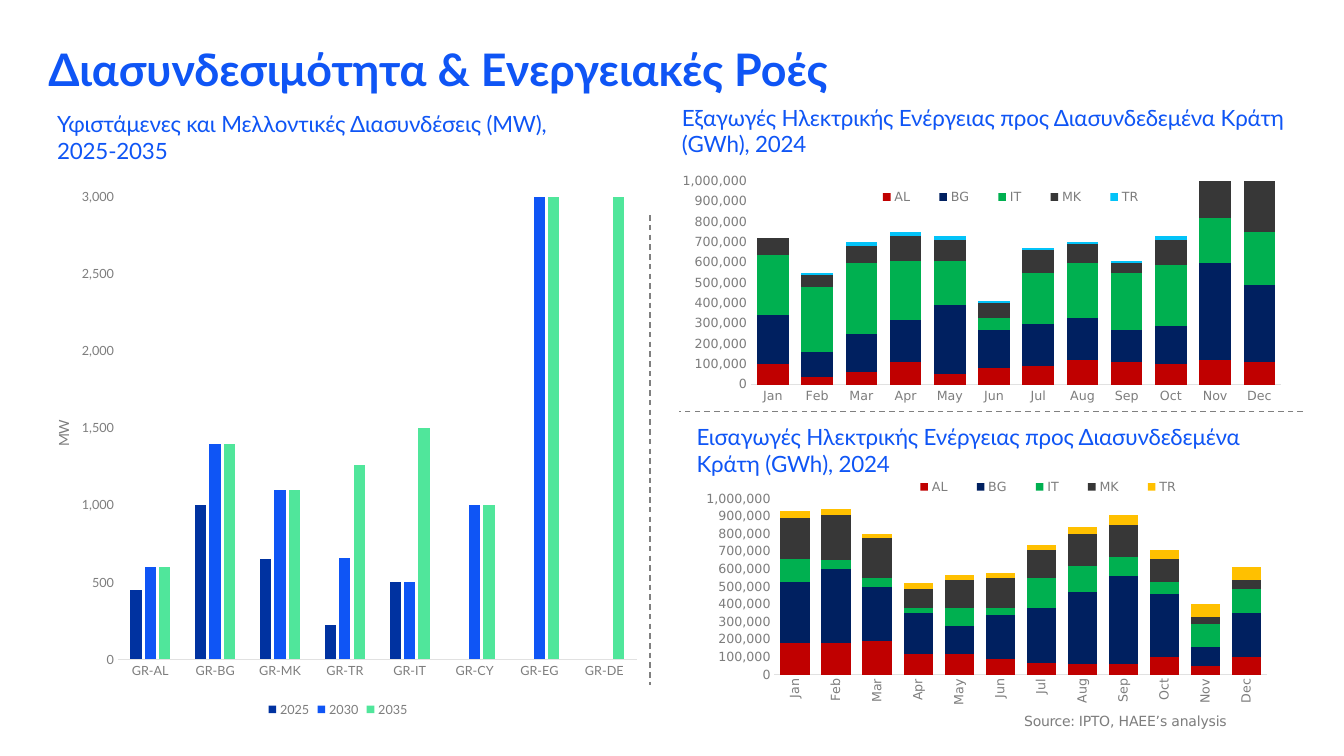
from lxml import etree
from pptx import Presentation
from pptx.chart.data import CategoryChartData
from pptx.dml.color import RGBColor
from pptx.enum.chart import XL_CHART_TYPE, XL_LEGEND_POSITION, XL_TICK_MARK
from pptx.enum.dml import MSO_LINE
from pptx.enum.shapes import MSO_CONNECTOR
from pptx.oxml.ns import qn
from pptx.util import Pt

PX = 9525
STACK = XL_CHART_TYPE.COLUMN_STACKED
CLUSTER = XL_CHART_TYPE.COLUMN_CLUSTERED
TOP, BOTTOM = XL_LEGEND_POSITION.TOP, XL_LEGEND_POSITION.BOTTOM
NO_TICK = XL_TICK_MARK.NONE
STRAIGHT = MSO_CONNECTOR.STRAIGHT
DASH = MSO_LINE.DASH

BLUE = RGBColor(0x0F, 0x55, 0xF5)
DEEP = RGBColor(0x00, 0x32, 0xA0)
MINT = RGBColor(0x50, 0xE6, 0x9B)
RED = RGBColor(0xC0, 0x00, 0x00)
NAVY = RGBColor(0x00, 0x20, 0x60)
GREEN = RGBColor(0x00, 0xB0, 0x50)
DARK = RGBColor(0x37, 0x37, 0x37)
CYAN = RGBColor(0x03, 0xC3, 0xF8)
AMBER = RGBColor(0xFF, 0xC0, 0x00)
GREY = RGBColor(0x7D, 0x7D, 0x7D)
PALE = RGBColor(0xE1, 0xE1, 0xE1)
RULE = RGBColor(0x80, 0x80, 0x80)

LATO, SANS = "Lato", "DejaVu Sans"
MONTHS = "Jan Feb Mar Apr May Jun Jul Aug Sep Oct Nov Dec".split()
LINKS = ["GR-" + code for code in "AL BG MK TR IT CY EG DE".split()]
LANDS = "AL BG IT MK TR".split()
EXPORTS = [
    [10, 4, 6, 11, 5, 8, 9, 12, 11, 10, 12, 11],
    [24, 12, 19, 21, 34, 19, 21, 21, 16, 19, 48, 38],
    [30, 32, 35, 29, 22, 6, 25, 27, 28, 30, 22, 26],
    [8, 6, 8, 12, 10, 7, 11, 9, 5, 12, 20, 25],
    [0, 1, 2, 2, 2, 1, 1, 1, 1, 2, 0, 0],
]
IMPORTS = [
    [18, 18, 19, 12, 12, 9, 7, 6, 6, 10, 5, 10],
    [35, 42, 31, 23, 16, 25, 31, 41, 50, 36, 11, 25],
    [13, 5, 5, 3, 10, 4, 17, 15, 11, 7, 13, 14],
    [23, 26, 23, 11, 16, 17, 16, 18, 18, 13, 4, 5],
    [4, 3, 2, 3, 3, 3, 3, 4, 6, 5, 7, 7],
]
GRID = [
    ("2025", [450, 1000, 650, 220, 500, None, None, None], DEEP),
    ("2030", [600, 1400, 1100, 660, 500, 1000, 3000, None], BLUE),
    ("2035", [600, 1400, 1100, 1260, 1500, 1000, 3000, 3000], MINT),
]


def style(font, face, size, color):
    """Set face, size and colour of a font."""
    font.name, font.size = face, Pt(size)
    font.color.rgb = color


def place(node, spot, index, inner=False):
    """Give a chart part a manual layout in fractions of the chart."""
    for old in node.findall(qn("c:layout")):
        node.remove(old)
    layout = etree.Element(qn("c:layout"))
    manual = etree.SubElement(layout, qn("c:manualLayout"))
    pairs = [("layoutTarget", "inner")] if inner else []
    pairs += [("xMode", "edge"), ("yMode", "edge"), *zip("xywh", spot)]
    for tag, value in pairs:
        etree.SubElement(manual, qn("c:" + tag)).set("val", str(value))
    node.insert(index, layout)


def turn(node):
    """Turn the text of a chart part upright."""
    body = node.find(".//" + qn("a:bodyPr"))
    body.set("rot", "-5400000")
    body.set("vert", "horz")


def add_bars(slide, box, kind, cats, series, face, top, step, gap, lap, spot):
    """Draw a column chart in the box and return it."""
    data = CategoryChartData(number_format="General")
    data.categories = cats
    for name, vals, _ in series:
        data.add_series(name, vals)
    chart = slide.shapes.add_chart(kind, *(n * PX for n in box), data).chart
    chart.has_title = False
    style(chart.font, face, 10, DARK)
    plot = chart.plots[0]
    plot.gap_width, plot.overlap = gap, lap
    plot.vary_by_categories = False
    for bar, (_, _, color) in zip(plot.series, series):
        bar.format.fill.solid()
        bar.format.fill.fore_color.rgb = color
        bar.invert_if_negative = False
    cat, val = chart.category_axis, chart.value_axis
    for axis in (cat, val):
        axis.major_tick_mark = axis.minor_tick_mark = NO_TICK
        axis.has_major_gridlines = False
        style(axis.tick_labels.font, face, 9, GREY)
    cat.format.line.color.rgb = PALE
    cat.format.line.width = Pt(0.75)
    val.format.line.fill.background()
    val.minimum_scale, val.maximum_scale, val.major_unit = 0, top, step
    val.tick_labels.number_format = "#,##0"
    val.tick_labels.number_format_is_linked = False
    chart.has_legend = True
    style(chart.legend.font, face, 9, GREY)
    place(chart._chartSpace.find(".//" + qn("c:plotArea")), spot, 0, True)
    return chart


def add_flow(slide, box, table, last, spot, key, upright=False):
    """Draw a monthly stacked chart with its legend on top."""
    colors = [RED, NAVY, GREEN, DARK, last]
    series = [(land, [n * 10000 for n in row], color)
              for land, row, color in zip(LANDS, table, colors)]
    chart = add_bars(slide, box, STACK, MONTHS, series, SANS,
                     1000000, 100000, 40, 100, spot)
    chart.legend.position = TOP
    chart.legend.include_in_layout = True
    place(chart.legend._element, key, 1)
    if upright:
        turn(chart.category_axis._element.find(qn("c:txPr")))


def add_grid(slide, box):
    """Draw the clustered chart of links between countries."""
    chart = add_bars(slide, box, CLUSTER, LINKS, GRID, LATO, 3000, 500,
                     219, -27, (0.147, 0.034, 0.832, 0.852))
    chart.legend.position = BOTTOM
    chart.legend.include_in_layout = False
    title = chart.value_axis.axis_title
    run = title.text_frame.paragraphs[0].add_run()
    run.text = "MW"
    style(run.font, LATO, 10, GREY)
    run.font.bold = False
    turn(title._element)
    place(title._element, (0.04, 0.44), 1)


def add_rule(slide, *ends):
    """Draw a dashed line between two points."""
    rule = slide.shapes.add_connector(STRAIGHT, *(n * PX for n in ends))
    rule.line.color.rgb = RULE
    rule.line.width = Pt(1)
    rule.line.dash_style = DASH
    etree.SubElement(rule._element.spPr, qn("a:effectLst"))


def add_text(slide, box, runs, face, size, color, bold=False):
    """Write runs of text with tracking and return the text frame."""
    frame = slide.shapes.add_textbox(*(n * PX for n in box)).text_frame
    frame.word_wrap = True
    for text, track in runs:
        run = frame.paragraphs[0].add_run()
        run.text = text
        style(run.font, face, size, color)
        run.font.bold = bold
        run._r.get_or_add_rPr().set("spc", str(track))
    return frame


def add_title(slide, box):
    """Write the slide title flush with its box."""
    frame = add_text(slide, box, [("Διασυνδεσιμότητα & Ενεργειακές Ροές", 0)],
                     LATO, 32, BLUE, True)
    frame.margin_left = frame.margin_right = 0
    frame.margin_top = frame.margin_bottom = 0


def add_source(slide, box):
    """Write the source line."""
    runs = [("Source: IPTO", -20), (", HAEE’s analysis", -10)]
    para = add_text(slide, box, runs, SANS, 10, GREY).paragraphs[0]
    para.line_spacing = 0.9
    para._p.get_or_add_pPr().set("marL", str(12 * PX))


def main():
    """Build and save the slide."""
    deck = Presentation()
    deck.slide_width, deck.slide_height = 1280 * PX, 720 * PX
    slide = deck.slides.add_slide(deck.slide_layouts[6])
    add_title(slide, (46, 40, 1187, 52))
    add_flow(slide, (639, 164, 594, 249), EXPORTS, CYAN,
             (0.128, 0.035, 0.851, 0.778), (0.3, 0.05, 0.49, 0.09))
    add_flow(slide, (639, 440, 594, 249), IMPORTS, AMBER,
             (0.166, 0.141, 0.79, 0.674), (0.36, 0.05, 0.49, 0.09), True)
    add_rule(slide, 1241, 392, 647, 392)
    add_rule(slide, 619, 205, 619, 652)
    heads = [
        ((45, 100, 540, 61),
         "Υφιστάμενες και Μελλοντικές Διασυνδέσεις (MW), 2025-2035"),
        ((640, 94, 602, 61), "Εξαγωγές Ηλεκτρικής Ενέργειας προς "
         "Διασυνδεδεμένα Κράτη (GWh), 2024"),
        ((654, 398, 602, 61), "Εισαγωγές Ηλεκτρικής Ενέργειας προς "
         "Διασυνδεδεμένα Κράτη (GWh), 2024"),
    ]
    for box, text in heads:
        add_text(slide, box, [(text, -10)], LATO, 16, BLUE)
    add_source(slide, (954, 676, 288, 24))
    add_grid(slide, (25, 170, 594, 517))
    deck.save("out.pptx")


if __name__ == "__main__":
    main()
